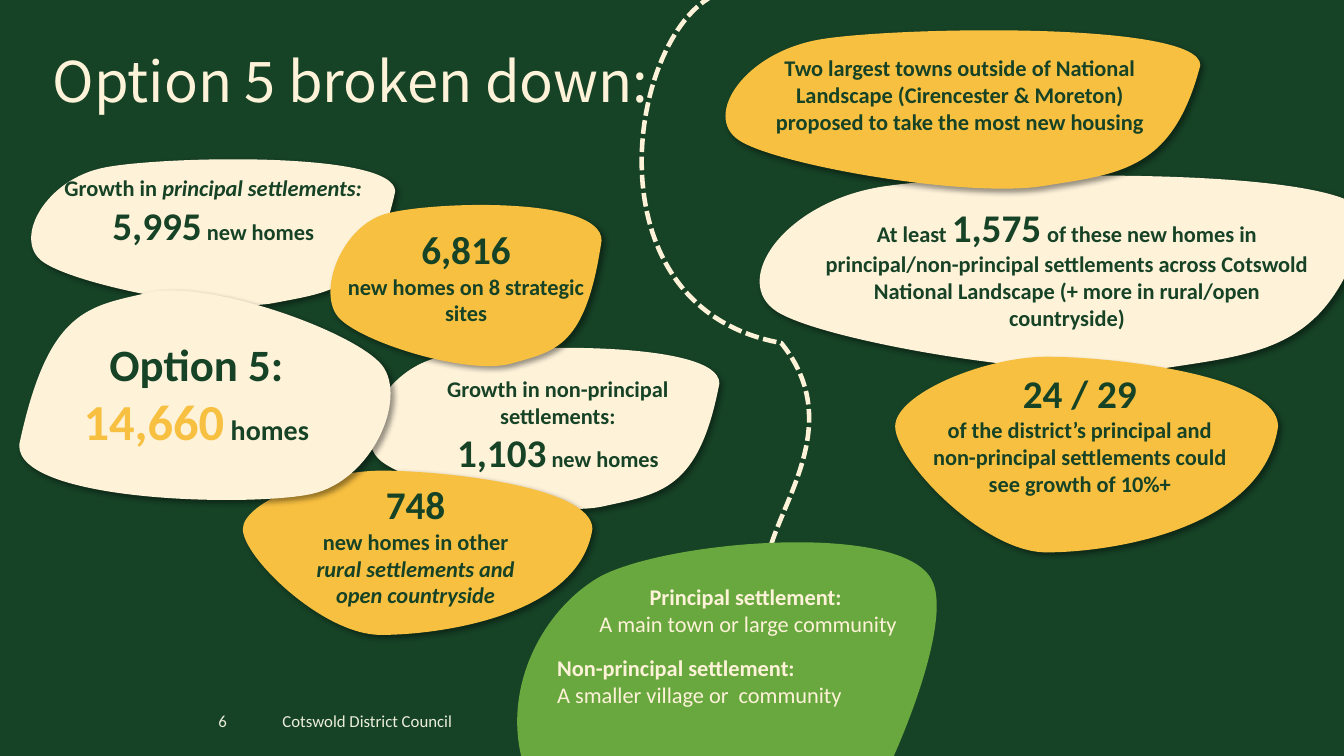
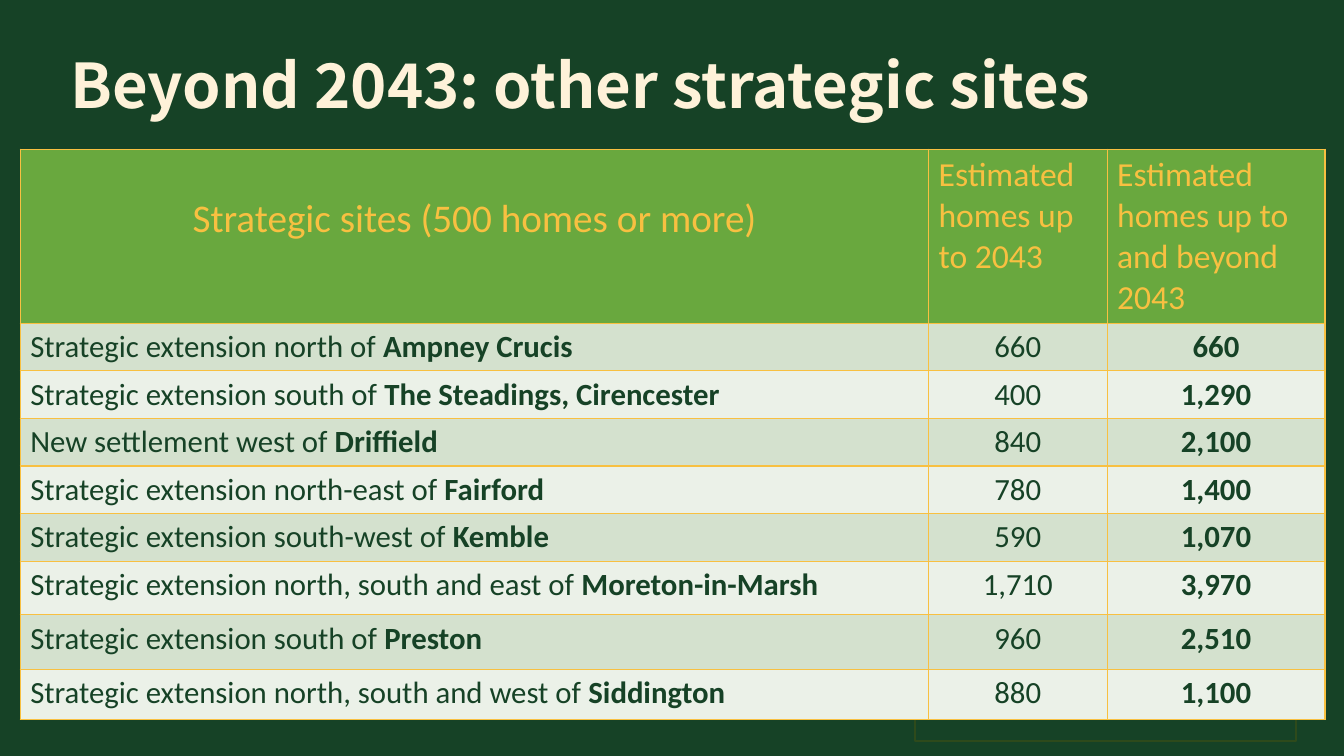
from typing import NamedTuple

from lxml import etree
from pptx import Presentation
from pptx.dml.color import RGBColor
from pptx.enum.dml import MSO_LINE
from pptx.enum.shapes import MSO_SHAPE
from pptx.enum.text import MSO_ANCHOR, MSO_AUTO_SIZE, PP_ALIGN
from pptx.oxml import parse_xml
from pptx.oxml.ns import nsdecls, qn
from pptx.util import Cm, Pt

LEFT, CENTER, RIGHT = PP_ALIGN.LEFT, PP_ALIGN.CENTER, PP_ALIGN.RIGHT
MIDDLE = MSO_ANCHOR.MIDDLE
FIT_TEXT = MSO_AUTO_SIZE.SHAPE_TO_FIT_TEXT
RECTANGLE = MSO_SHAPE.RECTANGLE
DASH = MSO_LINE.SQUARE_DOT

DARK = RGBColor(0x16, 0x42, 0x26)
CREAM = RGBColor(0xFE, 0xF2, 0xD9)
GOLD = RGBColor(0xF8, 0xC0, 0x41)
GREEN = RGBColor(0x69, 0xA8, 0x3E)
FOOTER_TINT = RGBColor(0xEB, 0xEE, 0xD9)
FRAME_LINE = RGBColor(0x2E, 0x4A, 0x1B)
ROW_TINTS = (RGBColor(0xD4, 0xE1, 0xCE), RGBColor(0xEB, 0xF1, 0xE8))

BODY_FONT = "Calibri"
TITLE_FONT = "Noto Sans CJK KR"
TITLE_ONLY = 5
CURVE_STEPS = 24

# Curves in percent of their box: a start point, then three points per Bezier segment.
WIDE_LEAF = [(2.8, 69.6), (-5, 54.1), (4, 13.4), (20.3, 5.7),
             (36.4, -2.1), (100, -5.7), (100, 22.2),
             (94.2, 88.7), (83.1, 90.7), (66.8, 98.5),
             (50.7, 106.2), (10.6, 85.1), (2.8, 69.6)]
DROP_LEAF = [(0, 35.6), (0, 19.1), (23.2, 0), (39.7, 0),
             (56.6, 0), (100, 9.3), (100, 35.6),
             (96.1, 88.7), (56.1, 100), (39.5, 100),
             (22.9, 100), (0, 52.6), (0, 35.6)]
TOTAL_LEAF = [(97.8, 35), (104.9, 51), (95.1, 90.8), (78.6, 97.1),
              (62.2, 103.4), (-1.6, 101), (-0.8, 73.3),
              (7.1, 7.3), (18.1, 6.8), (34.5, 0),
              (51, -6.3), (90.4, 18.9), (97.8, 35)]
GLOSSARY_LEAF = [(98.8, 9.5), (105.8, 24.2), (77, 88.2), (61.4, 97.5),
                 (45.8, 106.5), (17.3, 85.8), (5.3, 64),
                 (-7, 42.5), (4.1, 17.8), (19.7, 8.5),
                 (35.5, -0.5), (92, -5.5), (98.8, 9.5)]
STEM = [(45.9, 0), (-19.9, 2.6), (-59.6, 51.5), (80.8, 57.6),
        (140.4, 75.2), (36.3, 92.8), (83.6, 100)]


class Run(NamedTuple):
    text: str
    size: int = 16
    bold: bool = True
    italic: bool = False
    color: RGBColor = DARK


# Leaf curve, fill, leaf box, label box (cm), paragraphs; listed from back to front.
LEAVES = [
    (WIDE_LEAF, CREAM, (0.79, 4.01, 9.17, 3.68), (0.89, 4.27, 8.97, 2.82),
     [[Run("Growth in "), Run("principal settlements:", italic=True)],
      [Run("5,995", 28), Run(" new homes")]]),
    (WIDE_LEAF, CREAM, (9.32, 8.76, 8.81, 4.06), (9.83, 9.32, 8.46, 2.82),
     [[Run("Growth in non-principal settlements:")],
      [Run("1,103", 28), Run(" new homes")]]),
    (DROP_LEAF, GOLD, (6.12, 11.86, 8.81, 4.14), (7.34, 11.99, 6.27, 3.51),
     [[Run("748", 28)],
      [Run("new homes in other "),
       Run("rural settlements and open countryside", italic=True)]]),
    (TOTAL_LEAF, CREAM, (0.56, 7.37, 9.27, 5.23), (0.99, 8.36, 7.92, 3.18),
     [[Run("Option 5:", 32)],
      [Run("14,660", 36, color=GOLD), Run(" homes", 20)]]),
    (WIDE_LEAF, CREAM, (19.15, 4.42, 15.29, 4.93), (20.35, 5, 13.08, 3.51),
     [[Run("At least "), Run("1,575", 28), Run(" ", 18),
       Run("of these new homes in principal/non-principal settlements across "
           "Cotswold National Landscape (+ more in rural/open countryside)")]]),
    (WIDE_LEAF, GOLD, (18.29, 0.76, 11.96, 3.99), (18.92, 1.24, 10.54, 3),
     [[Run("Two largest towns outside of National Landscape (Cirencester & Moreton) "
           "proposed to take the most new housing")]]),
    (DROP_LEAF, GOLD, (22.56, 8.99, 9.65, 4.93), (23.24, 9.17, 7.95, 4.19),
     [[Run("24 / 29", 28)],
      [Run("of the district’s principal and non-principal settlements "
           "could see growth of 10%+")]]),
    (WIDE_LEAF, GOLD, (8.33, 5.16, 6.83, 4.06), (8.33, 5.56, 6.83, 2.82),
     [[Run("6,816", 28)], [Run("new homes on 8 strategic sites")]]),
]

# Label box (cm), alignment, term, meaning.
GLOSSARY = [
    ((14.45, 14.58, 8.81, 1.63), CENTER,
     "Principal settlement: ", "A main town or large community"),
    ((13.79, 16.36, 9.47, 1.63), LEFT,
     "Non-principal settlement:", "A smaller village or  community"),
]

HEADINGS = ["Strategic sites (500 homes or more)", "Estimated homes up to 2043",
            "Estimated homes up to and beyond 2043"]
SITES = [
    ("Strategic extension north of ", "Ampney Crucis", "660", "660"),
    ("Strategic extension south of ", "The Steadings, Cirencester", "400", "1,290"),
    ("New settlement west of ", "Driffield", "840", "2,100"),
    ("Strategic extension north-east of ", "Fairford", "780", "1,400"),
    ("Strategic extension south-west of ", "Kemble", "590", "1,070"),
    ("Strategic extension north, south and east of ", "Moreton-in-Marsh", "1,710", "3,970"),
    ("Strategic extension south of ", "Preston", "960", "2,510"),
    ("Strategic extension north, south and west of ", "Siddington", "880", "1,100"),
]
COLUMN_WIDTHS = (22.89, 4.5, 5.49)
ROW_HEIGHTS = (4.19, 1.17, 1.17, 1.17, 1.17, 1.17, 1.35, 1.37, 1.27)


def to_cm(box):
    return [Cm(length) for length in box]


def add_runs(paragraph, runs, align=LEFT, font=BODY_FONT):
    paragraph.alignment = align
    for item in runs:
        run = paragraph.add_run()
        run.text = item.text
        run.font.name = font
        run.font.size = Pt(item.size)
        run.font.bold = item.bold
        run.font.italic = item.italic
        run.font.color.rgb = item.color


def add_label(slide, box, paragraphs, align=CENTER):
    frame = slide.shapes.add_textbox(*to_cm(box)).text_frame
    frame.word_wrap = True
    frame.auto_size = FIT_TEXT
    for index, runs in enumerate(paragraphs):
        paragraph = frame.add_paragraph() if index else frame.paragraphs[0]
        add_runs(paragraph, runs, align)
    return frame


def add_titled_slide(deck, box, heading):
    slide = deck.slides.add_slide(deck.slide_layouts[TITLE_ONLY])
    title = slide.shapes.title
    title.left, title.top, title.width, title.height = to_cm(box)
    frame = title.text_frame
    frame.word_wrap = True
    frame.vertical_anchor = MIDDLE
    paragraph = frame.paragraphs[0]
    paragraph.line_spacing = 0.9
    add_runs(paragraph, [heading], font=TITLE_FONT)
    return slide


def bezier_point(p0, p1, p2, p3, t):
    u = 1 - t
    return tuple(u**3 * a + 3 * u * u * t * b + 3 * u * t * t * c + t**3 * d
                 for a, b, c, d in zip(p0, p1, p2, p3))


def add_curve(slide, box, curve, close=True):
    """Size a freeform by points along the curve, then give it true Bezier segments."""
    left, top, width, height = to_cm(box)
    points = [(round(left + width * x / 100), round(top + height * y / 100))
              for x, y in curve]
    segments = [points[i:i + 4] for i in range(0, len(points) - 1, 3)]
    outline = [bezier_point(*segment, step / CURVE_STEPS)
               for segment in segments for step in range(1, CURVE_STEPS + 1)]
    builder = slide.shapes.build_freeform(*points[0])
    builder.add_line_segments(outline, close=close)
    shape = builder.convert_to_shape()
    shape.shadow.inherit = False

    geometry = next(shape.element.iter(qn("a:path")))
    for line in geometry.findall(qn("a:lnTo")):
        geometry.remove(line)
    for index, segment in enumerate(segments, start=1):
        bezier = etree.Element(qn("a:cubicBezTo"))
        for x, y in segment[1:]:
            etree.SubElement(bezier, qn("a:pt"),
                             x=str(x - shape.left), y=str(y - shape.top))
        geometry.insert(index, bezier)
    return shape


def add_leaf(slide, box, curve, color):
    leaf = add_curve(slide, box, curve)
    leaf.fill.solid()
    leaf.fill.fore_color.rgb = color
    leaf.line.fill.background()
    return leaf


def cast_shadow(shape):
    effects = shape.element.spPr.find(qn("a:effectLst"))
    effects.append(parse_xml(
        f'<a:outerShdw {nsdecls("a")} blurRad="{Pt(4)}" dist="{Pt(3)}" dir="2700000" '
        'algn="tl" rotWithShape="0"><a:srgbClr val="000000"><a:alpha val="40000"/>'
        '</a:srgbClr></a:outerShdw>'))


def add_footer(slide):
    for box, text, align in (((6.4, 17.65, 5.72, 1.02), "Cotswold District Council", CENTER),
                             ((2.26, 17.65, 3.71, 1.02), "6", RIGHT)):
        frame = add_label(slide, box, [[Run(text, 12, False, color=FOOTER_TINT)]], align)
        frame.vertical_anchor = MIDDLE


def add_stem(slide, box):
    stem = add_curve(slide, box, STEM, close=False)
    stem.fill.background()
    stem.line.color.rgb = CREAM
    stem.line.width = Pt(3.25)
    stem.line.dash_style = DASH


def build_breakdown_slide(deck):
    slide = add_titled_slide(deck, (1.07, 0.28, 29.21, 3.68),
                             Run("Option 5 broken down:", 40, False, color=CREAM))
    add_stem(slide, (16.69, -0.25, 3.71, 15.44))
    add_leaf(slide, (13.03, 13.67, 10.59, 10.16), GLOSSARY_LEAF, GREEN)
    add_footer(slide)
    for curve, color, leaf_box, label_box, paragraphs in LEAVES:
        cast_shadow(add_leaf(slide, leaf_box, curve, color))
        add_label(slide, label_box, paragraphs)
    for box, align, term, meaning in GLOSSARY:
        add_label(slide, box, [[Run(term, color=CREAM)],
                               [Run(meaning, bold=False, color=CREAM)]], align)


def style_cell(cell, color):
    cell.fill.solid()
    cell.fill.fore_color.rgb = color
    properties = cell._tc.get_or_add_tcPr()
    for index, side in enumerate("LRTB"):
        properties.insert(index, parse_xml(
            f'<a:ln{side} {nsdecls("a")} w="{Pt(1)}"><a:solidFill>'
            f'<a:srgbClr val="{GOLD}"/></a:solidFill></a:ln{side}>'))


def add_sites_table(slide, left, top):
    box = (left, top, sum(COLUMN_WIDTHS), sum(ROW_HEIGHTS))
    table = slide.shapes.add_table(len(ROW_HEIGHTS), len(COLUMN_WIDTHS), *to_cm(box)).table
    for column, width in zip(table.columns, COLUMN_WIDTHS):
        column.width = Cm(width)
    for row, height in zip(table.rows, ROW_HEIGHTS):
        row.height = Cm(height)

    for index, heading in enumerate(HEADINGS):
        cell = table.cell(0, index)
        style_cell(cell, GREEN)
        size, align = (24, LEFT) if index else (28, CENTER)
        add_runs(cell.text_frame.paragraphs[0], [Run(heading, size, False, color=GOLD)], align)
    table.cell(0, 0).margin_top = Cm(1.16)

    for number, (scheme, place, by_2043, beyond) in enumerate(SITES):
        contents = [([Run(scheme, 22, False), Run(place, 22)], LEFT),
                    ([Run(by_2043, 22, False)], CENTER),
                    ([Run(beyond, 22)], CENTER)]
        for index, (runs, align) in enumerate(contents):
            cell = table.cell(number + 1, index)
            style_cell(cell, ROW_TINTS[number % 2])
            add_runs(cell.text_frame.paragraphs[0], runs, align)


def build_sites_slide(deck):
    slide = add_titled_slide(deck, (1.52, 0.38, 29.21, 3.68),
                             Run("Beyond 2043: other strategic sites", 44, color=CREAM))
    frame = slide.shapes.add_shape(RECTANGLE, *to_cm((23.06, 15.88, 9.6, 2.79)))
    frame.shadow.inherit = False
    frame.fill.solid()
    frame.fill.fore_color.rgb = DARK
    frame.line.color.rgb = FRAME_LINE
    frame.line.width = Pt(1.5)
    add_sites_table(slide, 0.51, 3.76)


def main():
    deck = Presentation()
    deck.slide_width, deck.slide_height = Cm(33.87), Cm(19.05)
    background = deck.slide_master.background.fill
    background.solid()
    background.fore_color.rgb = DARK
    build_breakdown_slide(deck)
    build_sites_slide(deck)
    deck.save("out.pptx")


if __name__ == "__main__":
    main()
